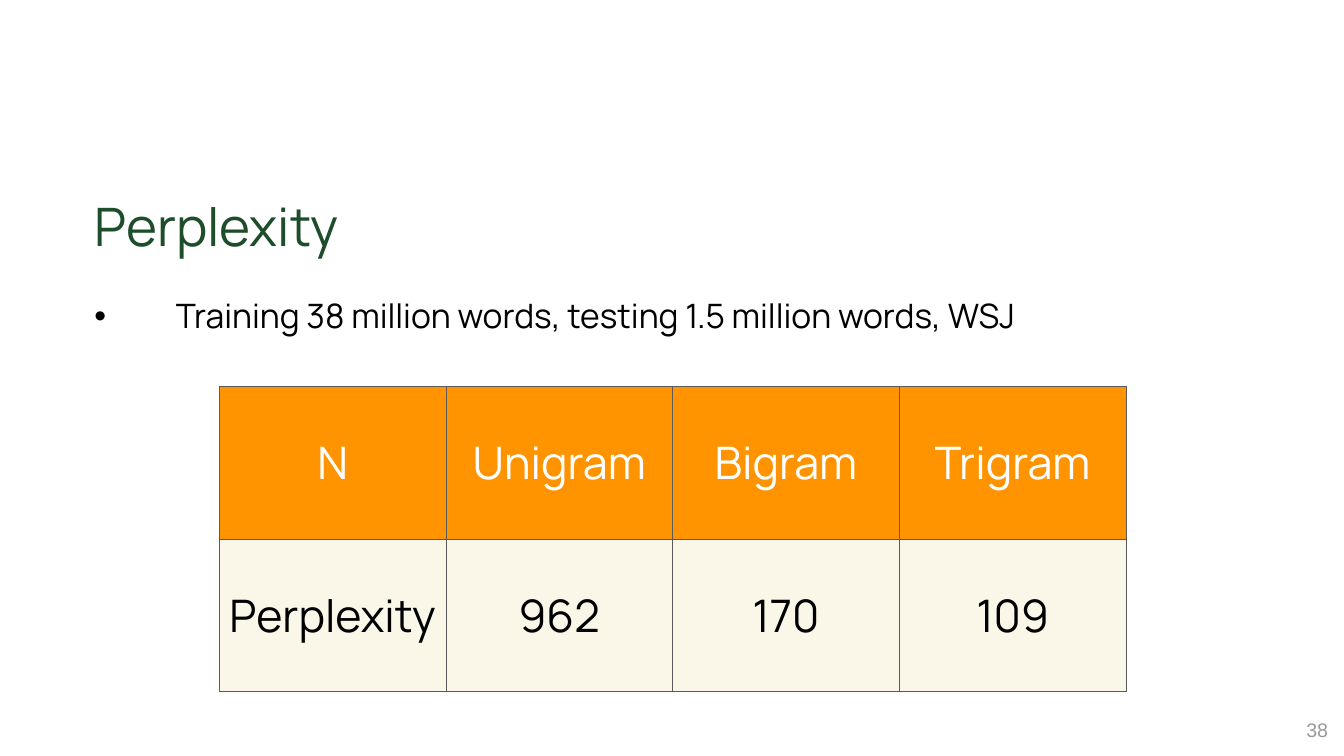
import pptx
import pptx.dml.color
import pptx.enum.text
import pptx.oxml
import pptx.oxml.ns
import pptx.util
from dataclasses import dataclass

Pt = pptx.util.Pt
ALIGN = pptx.enum.text.PP_ALIGN
ANCHOR = pptx.enum.text.MSO_ANCHOR

TITLE = "Perplexity"
BULLETS = ["Training 38 million words, testing 1.5 million words, WSJ"]
RESULTS = [
    ["N", "Unigram", "Bigram", "Trigram"],
    ["Perplexity", "962", "170", "109"],
]
PAGE_NUMBER = "38"


@dataclass(frozen=True)
class Theme:
    font: str = "Manrope"
    number_font: str = "Arial"
    title_size: float = 75.7
    body_size: float = 48
    table_size: float = 64
    number_size: float = 28
    green: str = "1E4D2B"
    black: str = "000000"
    white: str = "FFFFFF"
    orange: str = "FF9400"
    cream: str = "FAF7E9"
    border: str = "5B5A5A"
    grey: str = "99999A"


THEME = Theme()
SLIDE_SIZE = (1920, 1080)
LEFT, CONTENT_WIDTH = 127.44, 1722.24
TITLE_BOX = (LEFT, 268.56, CONTENT_WIDTH, 120.96)
BODY_BOX = (LEFT, 420.48, CONTENT_WIDTH, 560.16)
TABLE_BOX = (313.2, 552.24, 1295.28, 435.6)
NUMBER_BOX = (1861.2, 1023.84, 39.6, 38.16)
BULLET_INDENT = 116.64


def rgb(colour):
    return pptx.dml.color.RGBColor.from_string(colour)


def place(shape, box):
    shape.left, shape.top, shape.width, shape.height = map(Pt, box)


def set_frame(frame, inset, anchor, wrap=True):
    frame.margin_left = frame.margin_right = Pt(inset)
    frame.margin_top = frame.margin_bottom = Pt(inset)
    frame.vertical_anchor = anchor
    frame.word_wrap = wrap
    frame.auto_size = pptx.enum.text.MSO_AUTO_SIZE.NONE


def write(paragraph, text, size, colour, align, font=THEME.font):
    paragraph.alignment = align
    run = paragraph.add_run()
    run.text = text
    run.font.name = font
    run.font.size = Pt(size)
    run.font.color.rgb = rgb(colour)


def add_bullet(paragraph):
    properties = paragraph._p.get_or_add_pPr()
    properties.set("marL", str(Pt(BULLET_INDENT)))
    properties.set("indent", str(-Pt(BULLET_INDENT)))
    bullet = pptx.oxml.ns.qn("a:buChar")
    properties.append(properties.makeelement(bullet, {"char": "•"}))


def add_borders(cell):
    properties = cell._tc.get_or_add_tcPr()
    for side in ("lnL", "lnR", "lnT", "lnB"):
        properties.append(pptx.oxml.parse_xml(
            f'<a:{side} {pptx.oxml.ns.nsdecls("a")} w="{Pt(1)}"><a:solidFill>'
            f'<a:srgbClr val="{THEME.border}"/></a:solidFill></a:{side}>'))


def add_title(slide):
    title = slide.shapes.title
    place(title, TITLE_BOX)
    set_frame(title.text_frame, 7.2, ANCHOR.TOP)
    write(title.text_frame.paragraphs[0], TITLE, THEME.title_size, THEME.green, ALIGN.LEFT)


def add_body(slide):
    body = slide.placeholders[1]
    place(body, BODY_BOX)
    frame = body.text_frame
    set_frame(frame, 7.2, ANCHOR.TOP)
    for index, text in enumerate(BULLETS):
        paragraph = frame.add_paragraph() if index else frame.paragraphs[0]
        add_bullet(paragraph)
        paragraph.line_spacing = 0.9
        paragraph.space_before = Pt(45 if index else 0)
        write(paragraph, text, THEME.body_size, THEME.black, ALIGN.LEFT)


def add_results(slide):
    row_count, column_count = len(RESULTS), len(RESULTS[0])
    left, top, width, height = TABLE_BOX
    table = slide.shapes.add_table(row_count, column_count, *map(Pt, TABLE_BOX)).table
    for column in table.columns:
        column.width = Pt(width / column_count)
    for row_index, values in enumerate(RESULTS):
        table.rows[row_index].height = Pt(height / row_count)
        fill, colour = ((THEME.cream, THEME.black) if row_index
                        else (THEME.orange, THEME.white))
        for column_index, value in enumerate(values):
            cell = table.cell(row_index, column_index)
            add_borders(cell)
            cell.fill.solid()
            cell.fill.fore_color.rgb = rgb(fill)
            cell.vertical_anchor = ANCHOR.MIDDLE
            cell.margin_left = cell.margin_right = Pt(4)
            cell.margin_top = cell.margin_bottom = Pt(4)
            write(cell.text_frame.paragraphs[0], value, THEME.table_size, colour, ALIGN.CENTER)


def add_page_number(slide):
    frame = slide.shapes.add_textbox(*map(Pt, NUMBER_BOX)).text_frame
    set_frame(frame, 3.6, ANCHOR.MIDDLE, wrap=False)
    write(frame.paragraphs[0], PAGE_NUMBER, THEME.number_size, THEME.grey,
          ALIGN.RIGHT, THEME.number_font)


def main():
    presentation = pptx.Presentation()
    presentation.slide_width, presentation.slide_height = map(Pt, SLIDE_SIZE)
    slide = presentation.slides.add_slide(presentation.slide_layouts[1])
    add_title(slide)
    add_body(slide)
    add_page_number(slide)
    add_results(slide)
    presentation.save("out.pptx")


if __name__ == "__main__":
    main()
